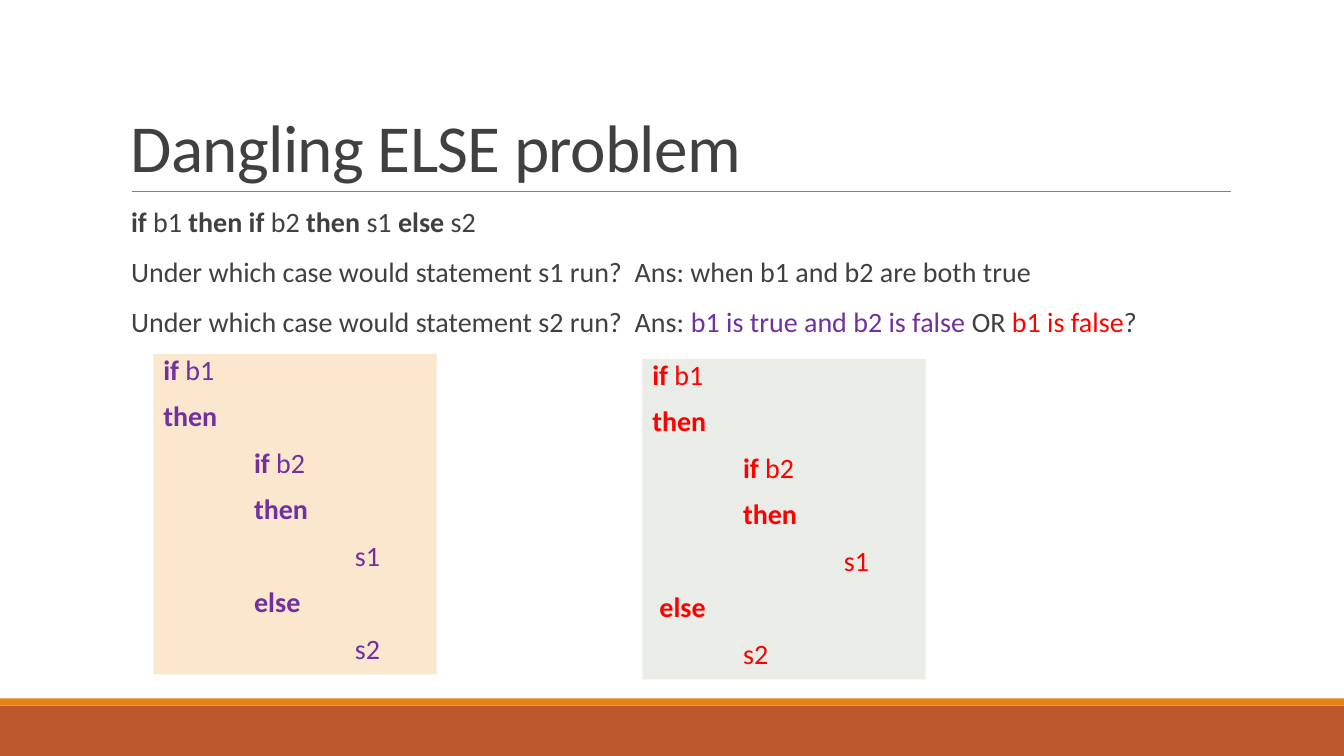
from pptx import Presentation
from pptx.dml.color import RGBColor
from pptx.enum.shapes import MSO_CONNECTOR, MSO_SHAPE
from pptx.enum.text import MSO_ANCHOR, PP_ALIGN
from pptx.oxml.ns import qn
from pptx.util import Inches, Pt
from lxml import etree

RECTANGLE = MSO_SHAPE.RECTANGLE
STRAIGHT = MSO_CONNECTOR.STRAIGHT
TOP, BOTTOM = MSO_ANCHOR.TOP, MSO_ANCHOR.BOTTOM
LEFT = PP_ALIGN.LEFT
FONT = "Calibri"
GREY, PURPLE, RED = "404040", "7030A0", "FF0000"

TITLE = "Dangling ELSE problem"
QUESTIONS = [
    [("if", True, GREY), (" b1 ", False, GREY), ("then if", True, GREY),
     (" b2 ", False, GREY), ("then", True, GREY), (" s1 ", False, GREY),
     ("else", True, GREY), (" s2", False, GREY)],
    [("Under which case would statement s1 run?  Ans: when b1 and b2 are both true",
      False, GREY)],
    [("Under which case would statement s2 run?  Ans: ", False, GREY),
     ("b1 is true and b2 is false ", False, PURPLE), ("OR ", False, GREY),
     ("b1 is false", False, RED), ("?", False, GREY)],
]
SHARED_CODE = [(0.1, "if", " b1"), (0.1, "then", ""), (1, "if", " b2"),
               (1, "then", ""), (2, "", "s1")]
READINGS = [
    (1.52, 3.51, "FBE6CE", PURPLE, [(1, "else", ""), (2, "", "s2")]),
    (6.37, 3.56, "EAECE7", RED, [(0.17, "else", ""), (1, "", "s2")]),
]
CODE_WIDTH, CODE_HEIGHT = 2.81, 3.18
FOOTER_BANDS = [(7, 0.5, "BD582C"), (6.93, 0.07, "E48312")]


def colour(value):
    return RGBColor.from_string(value)


def add_rectangle(left, top, width, height, fill):
    shape = page.shapes.add_shape(RECTANGLE, Inches(left), Inches(top),
                                  Inches(width), Inches(height))
    shape.shadow.inherit = False
    shape.fill.solid()
    shape.fill.fore_color.rgb = colour(fill)
    shape.line.fill.background()
    return shape


def add_text_box(left, top, width, height):
    return page.shapes.add_textbox(Inches(left), Inches(top),
                                   Inches(width), Inches(height))


def format_span(span, size, bold, value):
    span.font.name = FONT
    span.font.size = Pt(size)
    span.font.bold = bold
    span.font.color.rgb = colour(value)


def write_lines(box, lines, line_spacing):
    frame = box.text_frame
    frame.word_wrap = True
    frame.vertical_anchor = TOP
    frame.margin_left = frame.margin_right = 0
    for index, (indent, spans) in enumerate(lines):
        para = frame.add_paragraph() if index else frame.paragraphs[0]
        para.alignment = LEFT
        para.line_spacing = line_spacing
        para.space_before, para.space_after = Pt(12), Pt(2)
        para._p.get_or_add_pPr().set("marL", str(Inches(indent)))
        for text, bold, value in spans:
            span = para.add_run()
            span.text = text
            format_span(span, 20, bold, value)


deck = Presentation()
deck.slide_width, deck.slide_height = Inches(13.33), Inches(7.5)
page = deck.slides.add_slide(deck.slide_layouts[6])

for top, height, fill in FOOTER_BANDS:
    add_rectangle(0, top, 13.33, height, fill)

rule = page.shapes.add_connector(STRAIGHT, Inches(1.31), Inches(1.9),
                                 Inches(12.21), Inches(1.9))
rule.line.color.rgb = colour("808080")
rule.line.width = Pt(0.5)
etree.SubElement(rule._element.spPr, qn("a:effectLst"))

title = add_text_box(1.2, 0.31, 11, 1.59)
title.text_frame.word_wrap = True
title.text_frame.vertical_anchor = BOTTOM
title.text_frame.text = TITLE
heading = title.text_frame.paragraphs[0]
heading.line_spacing = 0.85
format_span(heading.runs[0], 48, False, GREY)
heading.runs[0].font._element.set("spc", "-50")

questions = add_text_box(1.2, 2.02, 10.35, 1.49)
write_lines(questions, [(0.1, spans) for spans in QUESTIONS], 0.9)

for left, top, fill, ink, ending in READINGS:
    box = add_rectangle(left, top, CODE_WIDTH, CODE_HEIGHT, fill)
    lines = []
    for indent, keyword, rest in SHARED_CODE + ending:
        spans = [(keyword, True, ink), (rest, False, ink)]
        lines.append((indent, [span for span in spans if span[0]]))
    write_lines(box, lines, 0.8)

deck.save("out.pptx")
